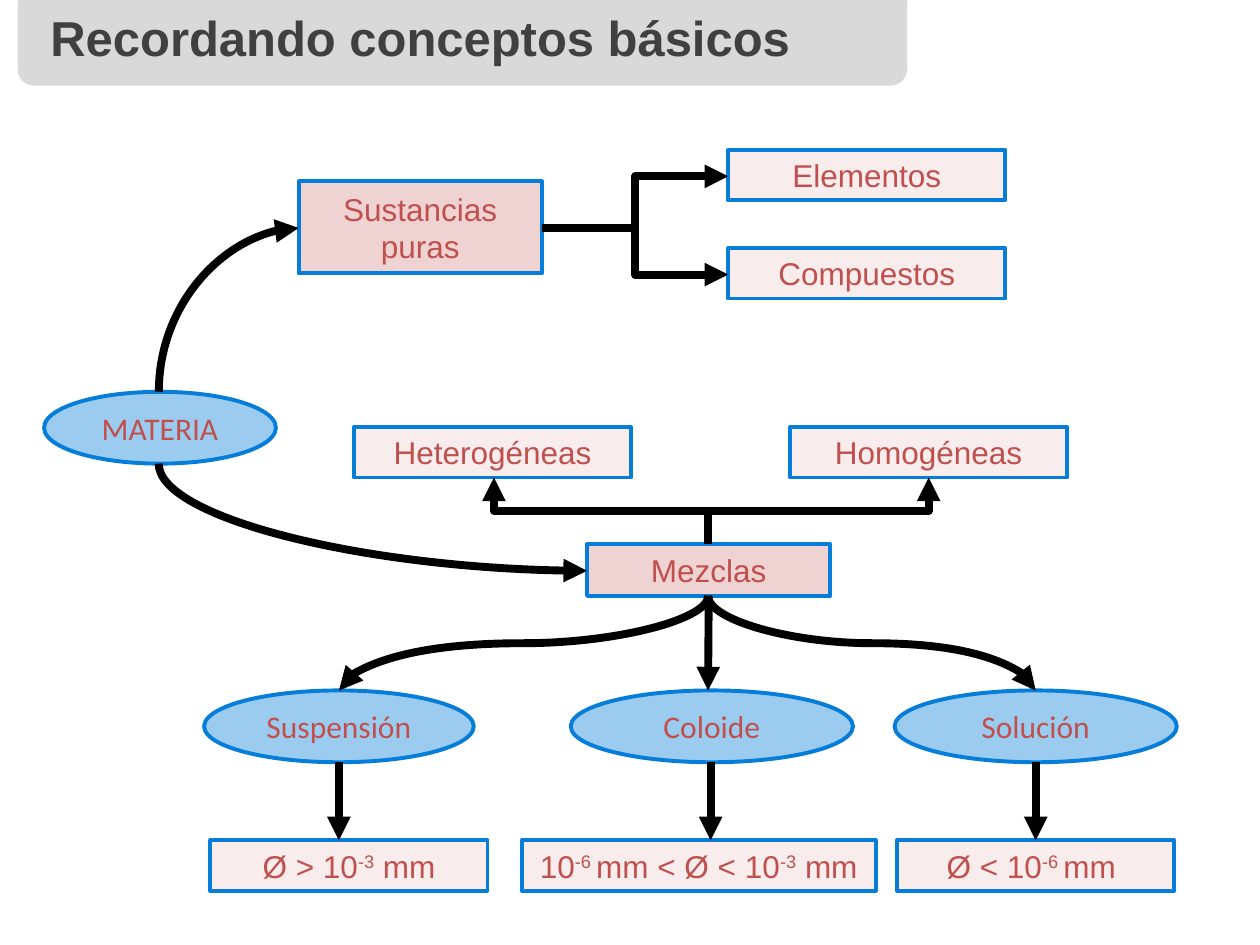
import pptx
import pptx.dml.color
import pptx.enum.dml
import pptx.enum.shapes
import pptx.enum.text
import pptx.oxml
import pptx.oxml.ns
import pptx.util
from pptx.util import Inches

COLORS = {
    "blue": "067DD9",
    "red": "C0504D",
    "black": "000000",
    "banner": "D9D9D9",
    "title": "404040",
}
SHAPES = pptx.enum.shapes.MSO_SHAPE
LINES = pptx.enum.shapes.MSO_CONNECTOR
STYLES = {
    "ellipse": (SHAPES.OVAL, "blue", 40, "Calibri"),
    "group": (SHAPES.RECTANGLE, "red", 25, "Arial"),
    "leaf": (SHAPES.RECTANGLE, "red", 10, "Arial"),
}
NODES = {
    "materia": ("ellipse", "MATERIA", 0.35, 3.11, 1.84, 0.57),
    "puras": ("group", "Sustancias puras", 2.37, 1.44, 1.93, 0.73),
    "mezclas": ("group", "Mezclas", 4.66, 4.32, 1.93, 0.41),
    "elementos": ("leaf", "Elementos", 5.78, 1.19, 2.2, 0.4),
    "compuestos": ("leaf", "Compuestos", 5.78, 1.97, 2.2, 0.4),
    "homogeneas": ("leaf", "Homogéneas", 6.27, 3.39, 2.2, 0.4),
    "heterogeneas": ("leaf", "Heterogéneas", 2.81, 3.39, 2.2, 0.4),
    "suspension": ("ellipse", "Suspensión", 1.62, 5.48, 2.14, 0.57),
    "coloide": ("ellipse", "Coloide", 4.53, 5.48, 2.24, 0.57),
    "solucion": ("ellipse", "Solución", 7.1, 5.48, 2.24, 0.57),
    "suspension_size": ("leaf", "Ø > 10^-3^ mm", 1.67, 6.67, 2.2, 0.4),
    "coloide_size": ("leaf", "10^-6 ^mm < Ø < 10^-3^ mm", 4.14, 6.67, 2.81, 0.4),
    "solucion_size": ("leaf", "Ø < 10^-6 ^mm ", 7.12, 6.67, 2.2, 0.4),
}
# Kind, start, end, and whether the route leaves its start vertically
ROUTES = [
    ("curvedConnector2", (1.26, 3.11), (2.37, 1.81), True),
    ("curvedConnector2", (1.26, 3.68), (4.66, 4.53), True),
    ("bentConnector3", (4.3, 1.81), (5.78, 2.18), False),
    ("bentConnector3", (4.3, 1.81), (5.78, 1.4), False),
    ("bentConnector3", (5.62, 4.32), (7.37, 3.79), True),
    ("bentConnector3", (5.62, 4.32), (3.92, 3.79), True),
    ("curvedConnector3", (5.62, 4.73), (2.69, 5.48), True),
    ("curvedConnector3", (5.62, 4.73), (8.22, 5.48), True),
]


def rgb(name):
    return pptx.dml.color.RGBColor.from_string(COLORS[name])


def set_format(target, values):
    for name, value in values.items():
        setattr(target, name, value)


def add_child(parent, tag, **attributes):
    child = pptx.oxml.parse_xml(f"<{tag} {pptx.oxml.ns.nsdecls('a')}/>")
    for name, value in attributes.items():
        child.set(name, value)
    parent.append(child)


def fill_shape(shape, color, opacity=100):
    shape.shadow.inherit = False
    shape.fill.solid()
    shape.fill.fore_color.rgb = rgb(color)
    if opacity < 100:
        srgb = shape.element.spPr.find(".//" + pptx.oxml.ns.qn("a:srgbClr"))
        add_child(srgb, "a:alpha", val=str(opacity * 1000))


def add_title(page):
    banner = page.shapes.add_shape(
        SHAPES.ROUNDED_RECTANGLE, Inches(0.14), Inches(-0.11), Inches(7.06), Inches(0.79))
    fill_shape(banner, "banner")
    banner.line.fill.background()
    title = page.shapes.title
    title.element.addprevious(banner.element)
    set_format(title, {"left": Inches(0.26), "top": Inches(0.01),
                       "width": Inches(6.15), "height": Inches(0.57)})
    title.text = "Recordando conceptos básicos"
    set_format(title.text_frame, {
        "word_wrap": False,
        "auto_size": pptx.enum.text.MSO_AUTO_SIZE.NONE,
        "vertical_anchor": pptx.enum.text.MSO_ANCHOR.MIDDLE})
    para = title.text_frame.paragraphs[0]
    para.alignment = pptx.enum.text.PP_ALIGN.CENTER
    font = para.runs[0].font
    set_format(font, {"name": "Arial", "size": pptx.util.Pt(28), "bold": True})
    font.color.rgb = rgb("title")


def add_node(page, style, text, *bounds):
    """Add a labelled shape; text between carets is superscript."""
    preset, color, opacity, face = STYLES[style]
    shape = page.shapes.add_shape(preset, *map(Inches, bounds))
    fill_shape(shape, color, opacity)
    shape.line.color.rgb = rgb("blue")
    shape.line.width = pptx.util.Pt(2.25)
    set_format(shape.text_frame, {
        "word_wrap": True, "vertical_anchor": pptx.enum.text.MSO_ANCHOR.MIDDLE})
    para = shape.text_frame.paragraphs[0]
    para.alignment = pptx.enum.text.PP_ALIGN.CENTER
    for index, part in enumerate(text.split("^")):
        span = para.add_run()
        span.text = part
        set_format(span.font, {"name": face, "size": pptx.util.Pt(18)})
        span.font.color.rgb = rgb("red")
        if index % 2:
            span.font._element.set("baseline", "30000")
    return shape


def add_arrow(page, start, end, kind=LINES.STRAIGHT):
    arrow = page.shapes.add_connector(kind, *map(Inches, start + end))
    arrow.line.color.rgb = rgb("black")
    arrow.line.width = pptx.util.Pt(4.5)
    add_child(arrow.line._get_or_add_ln(), "a:tailEnd", type="triangle")
    add_child(arrow.element.spPr, "a:effectLst")
    return arrow


def add_route(page, preset, start, end, vertical):
    """Add a bent or curved arrow, turned a quarter when it starts vertically."""
    kind = LINES.ELBOW if preset.startswith("bent") else LINES.CURVE
    arrow = add_arrow(page, start, end, kind)
    properties = arrow.element.spPr
    properties.find(pptx.oxml.ns.qn("a:prstGeom")).set("prst", preset)
    if not vertical:
        return
    dx, dy = end[0] - start[0], end[1] - start[1]
    clockwise = dx * dy < 0
    width, height = abs(dy), abs(dx)
    set_format(arrow, {
        "left": Inches((start[0] + end[0] - width) / 2),
        "top": Inches((start[1] + end[1] - height) / 2),
        "width": Inches(width), "height": Inches(height)})
    frame = properties.find(pptx.oxml.ns.qn("a:xfrm"))
    frame.set("rot", str((90 if clockwise else 270) * 60000))
    frame.set("flipH", str(int((dy < 0) == clockwise)))
    frame.set("flipV", str(int((dx > 0) == clockwise)))


def main():
    deck = pptx.Presentation()
    deck.slide_width, deck.slide_height = Inches(10), Inches(7.5)
    page = deck.slides.add_slide(deck.slide_layouts[5])
    add_title(page)
    nodes = {name: add_node(page, *values) for name, values in NODES.items()}
    for route in ROUTES:
        add_route(page, *route)
    to_coloide = add_arrow(page, (5.62, 4.73), (5.62, 5.48))
    to_coloide.begin_connect(nodes["mezclas"], 2)
    drops = [add_arrow(page, (x, 6.05), (x, 6.67)) for x in (2.69, 5.64, 8.22)]
    drops[-1].end_connect(nodes["solucion_size"], 0)
    deck.save("out.pptx")


if __name__ == "__main__":
    main()
